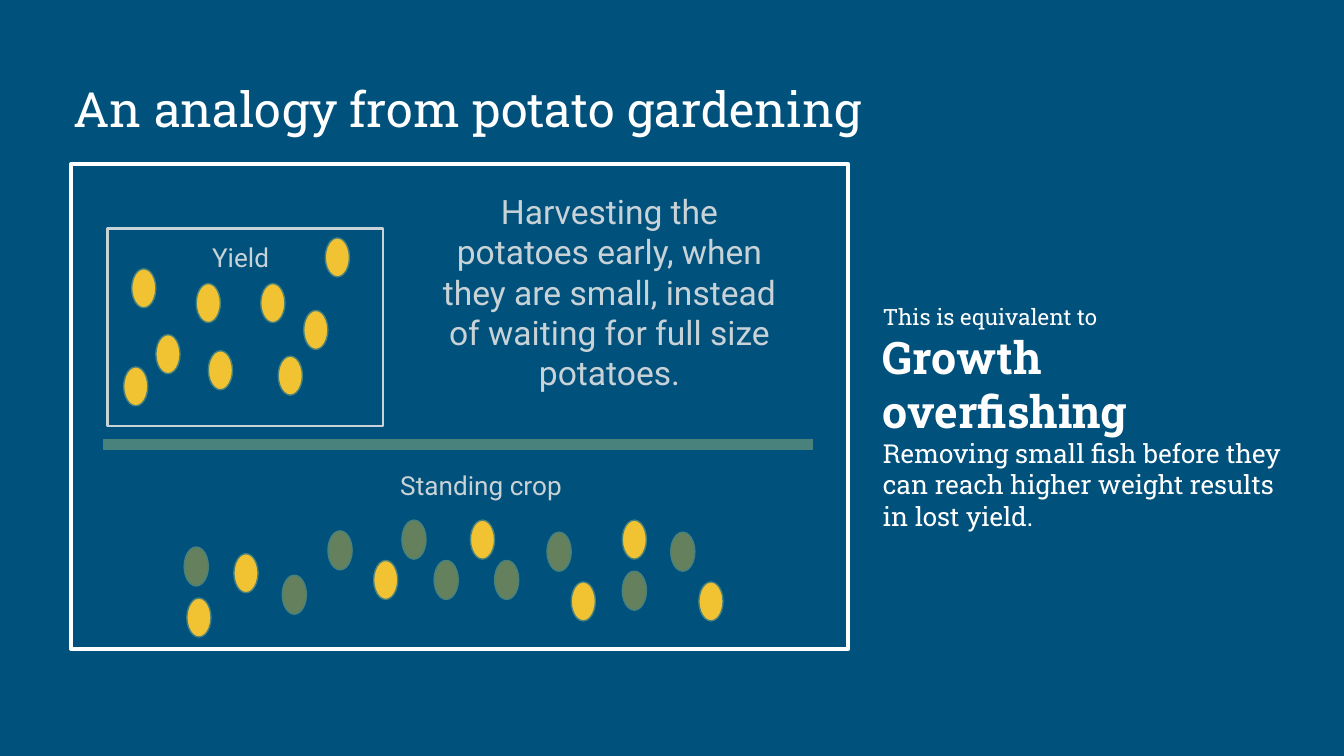
import pptx
import pptx.dml.color
import pptx.enum.shapes
import pptx.enum.text
import pptx.oxml
import pptx.oxml.ns
import pptx.util

# The slide is a grid of square cells: 100 columns by 56.25 rows (16:9).
COLUMNS, ROWS = 100, 56.25
CELL = pptx.util.Inches(10) / COLUMNS

NAVY, WHITE, MIST = "00517C", "FFFFFF", "C9D3D7"
GOLD, GREEN = "F1C232", "49827D"
BODY_FONT, HEADING_FONT = "Roboto", "Roboto Slab"
LINE_PITCH = 1.2
POTATO_WIDTH, POTATO_HEIGHT = 1.8, 2.9

# Left column and top row of every potato.
HARVESTED = [(9.8, 20), (19.4, 21.1), (14.6, 21.1), (11.6, 24.9), (15.5, 26.1),
             (20.7, 26.5), (22.6, 23.1), (9.2, 27.3), (24.2, 17.7)]
STILL_GROWING = [(46.3, 38.7), (52, 43.3), (35, 38.7), (27.8, 41.7),
                 (13.9, 44.5), (17.4, 41.2), (42.5, 43.3)]
TAKEN_FROM_CROP = [(21, 42.8), (36.8, 41.7), (29.9, 38.7), (46.3, 42.5),
                   (13.7, 40.7), (24.4, 39.5), (49.9, 39.6), (40.7, 39.6),
                   (32.3, 41.7)]


def cells(*counts):
    """Turn numbers of grid cells into slide lengths."""
    return [round(count * CELL) for count in counts]


def colour(target, hex_code):
    """Set a colour on a fill, a line's fill or a font's fill."""
    target.solid()
    target.fore_color.rgb = pptx.dml.color.RGBColor.from_string(hex_code)


def add_outlined(slide, preset, place, line, weight, fill=None, opacity=None):
    """Add a preset shape; opacity is a percentage of the fill."""
    shape = slide.shapes.add_shape(preset, *cells(*place))
    shape.shadow.inherit = False
    colour(shape.line.fill, line)
    shape.line.width = pptx.util.Pt(weight)
    if fill is None:
        shape.fill.background()
        return
    colour(shape.fill, fill)
    if opacity is not None:
        tint = shape.fill._xPr.find(".//" + pptx.oxml.ns.qn("a:srgbClr"))
        alpha = pptx.oxml.parse_xml(
            f'<a:alpha {pptx.oxml.ns.nsdecls("a")} val="{opacity * 1000}"/>')
        tint.append(alpha)


def add_frame(slide, place, line, weight):
    add_outlined(slide, pptx.enum.shapes.MSO_SHAPE.RECTANGLE, place, line, weight)


def add_potatoes(slide, positions, opacity=None):
    for column, row in positions:
        add_outlined(slide, pptx.enum.shapes.MSO_SHAPE.OVAL,
                     (column, row, POTATO_WIDTH, POTATO_HEIGHT),
                     GREEN, 0.75, fill=GOLD, opacity=opacity)


def add_divider(slide, start, end, hex_code, weight):
    divider = slide.shapes.add_connector(
        pptx.enum.shapes.MSO_CONNECTOR.STRAIGHT, *cells(*start, *end))
    colour(divider.line.fill, hex_code)
    divider.line.width = pptx.util.Pt(weight)
    divider._element.spPr.append(pptx.oxml.parse_xml(
        f'<a:effectLst {pptx.oxml.ns.nsdecls("a")}/>'))


def write(paragraph, text, *, size, font, hex_code, bold=False, align="LEFT"):
    """Put formatted text into a paragraph."""
    paragraph.alignment = getattr(pptx.enum.text.PP_ALIGN, align)
    paragraph.line_spacing = pptx.util.Pt(size * LINE_PITCH)
    run = paragraph.add_run()
    run.text = text
    run.font.size = pptx.util.Pt(size)
    run.font.name = font
    run.font.bold = bold
    colour(run.font.fill, hex_code)


def add_text(slide, place, *passages, anchor="TOP", **shared):
    """Add a text box; each passage is its text and its own format."""
    frame = slide.shapes.add_textbox(*cells(*place)).text_frame
    frame.word_wrap = True
    frame.vertical_anchor = getattr(pptx.enum.text.MSO_ANCHOR, anchor)
    (frame.margin_left, frame.margin_top,
     frame.margin_right, frame.margin_bottom) = cells(1, 1, 1, 1)
    for index, (text, own) in enumerate(passages):
        paragraph = frame.add_paragraph() if index else frame.paragraphs[0]
        write(paragraph, text, **shared, **own)


def main():
    deck = pptx.Presentation()
    deck.slide_width, deck.slide_height = cells(COLUMNS, ROWS)
    slide = deck.slides.add_slide(deck.slide_layouts[6])
    colour(slide.background.fill, NAVY)

    garden_text = {"font": BODY_FONT, "hex_code": MIST, "align": "CENTER"}
    heading_text = {"font": HEADING_FONT, "hex_code": WHITE}

    add_frame(slide, (5.3, 12.2, 57.8, 36.1), WHITE, 2.25)
    add_text(slide, (31.4, 13.2, 27.9, 17.2),
             ("Harvesting the potatoes early, when they are small, "
              "instead of waiting for full size potatoes.", {"size": 18}),
             **garden_text)
    add_divider(slide, (7.7, 33.1), (60.5, 33.1), GREEN, 6)

    add_frame(slide, (8, 17, 20.5, 14.7), MIST, 1.5)
    add_text(slide, (13, 17, 9.8, 4.4), ("Yield", {"size": 14}), **garden_text)
    add_potatoes(slide, HARVESTED)

    add_text(slide, (27.8, 33.9, 16, 4.4),
             ("Standing crop", {"size": 14}), **garden_text)
    add_potatoes(slide, STILL_GROWING)
    add_potatoes(slide, TAKEN_FROM_CROP, opacity=42)

    add_text(slide, (64.7, 21.35, 32.4, 19.4),
             ("This is equivalent to", {"size": 12}),
             ("Growth overfishing", {"size": 24, "bold": True}),
             ("Removing small fish before they can reach higher weight "
              "results in lost yield.", {"size": 14}),
             anchor="MIDDLE", **heading_text)
    add_text(slide, (4.5, 4.9, 64.7, 10.3),
             ("An analogy from potato gardening", {"size": 26}), **heading_text)

    deck.save("out.pptx")


if __name__ == "__main__":
    main()
